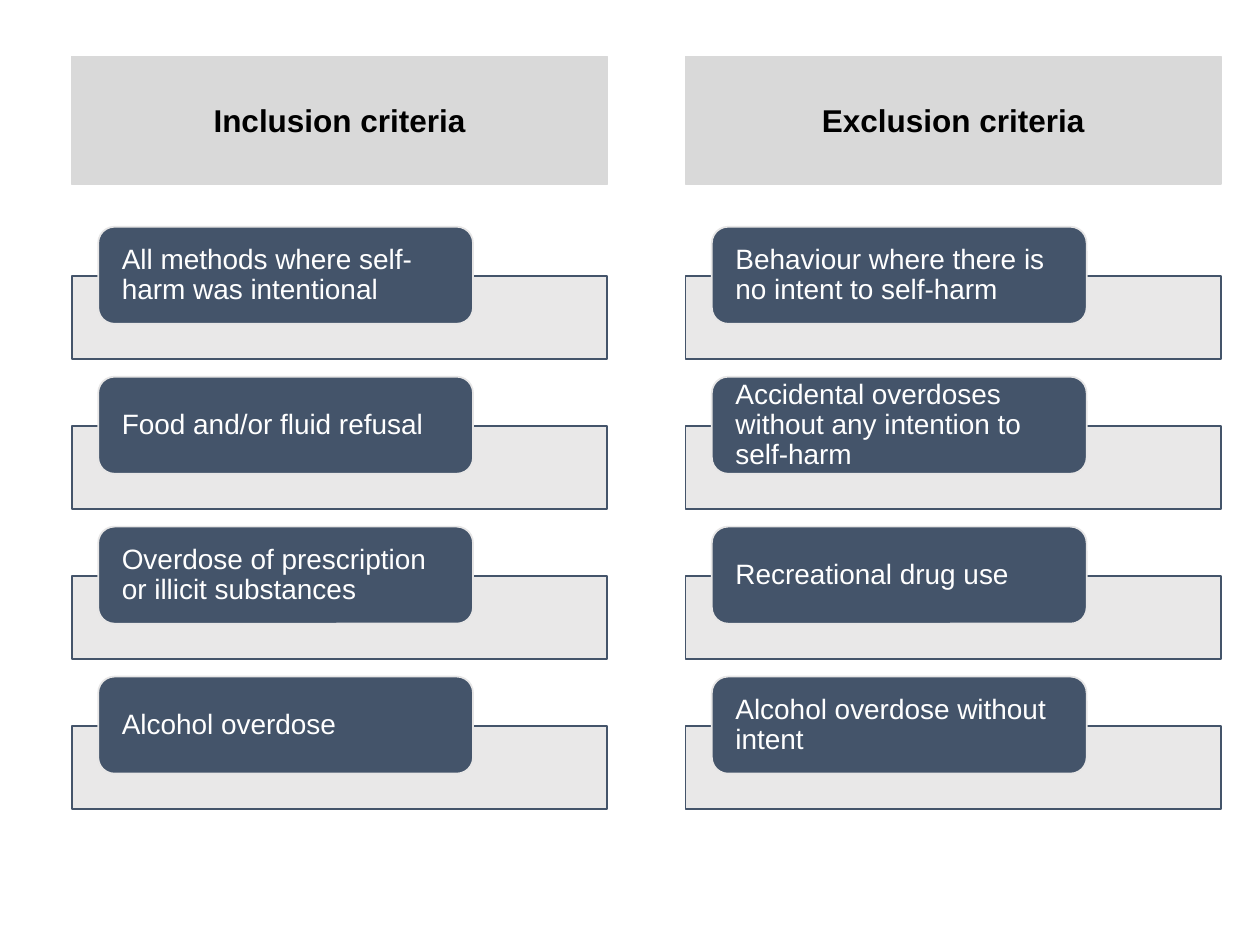
from lxml import etree
from pptx import Presentation
from pptx.dml.color import RGBColor
from pptx.enum.shapes import MSO_SHAPE
from pptx.enum.text import MSO_ANCHOR, PP_ALIGN
from pptx.oxml.ns import qn
from pptx.util import Inches, Pt

RECTANGLE = MSO_SHAPE.RECTANGLE
ROUNDED = MSO_SHAPE.ROUNDED_RECTANGLE
MIDDLE = MSO_ANCHOR.MIDDLE
LEFT, CENTER = PP_ALIGN.LEFT, PP_ALIGN.CENTER

NAVY, PALE, GREY = "44546A", "E7E6E6", "D9D9D9"
COLUMN_TOP, COLUMN_WIDTH = 0.45, 4.25
HEADER_HEIGHT = 1.01
FIRST_ROW, ROW_STEP = 1.35, 1.19

COLUMNS = [
    (0.57, "Inclusion criteria", [
        "All methods where self-harm was intentional",
        "Food and/or fluid refusal",
        "Overdose of prescription or illicit substances",
        "Alcohol overdose",
    ]),
    (5.44, "Exclusion criteria", [
        "Behaviour where there is no intent to self-harm",
        "Accidental overdoses without any intention to self-harm",
        "Recreational drug use",
        "Alcohol overdose without intent",
    ]),
]


def color(value):
    return RGBColor.from_string(value)


def add_box(shapes, kind, left, top, width, height, fill, line, weight=1):
    box = shapes.add_shape(kind, Inches(left), Inches(top), Inches(width), Inches(height))
    box.shadow.inherit = False
    box.fill.solid()
    box.fill.fore_color.rgb = color(fill)
    box.line.color.rgb = color(line)
    box.line.width = Pt(weight)
    return box


def set_opacity(box, percent):
    fill = box.fill._xPr.find(qn("a:solidFill"))
    etree.SubElement(fill[0], qn("a:alpha"), val=str(percent * 1000))


def write_text(box, text, size, text_color, align, bold=False):
    frame = box.text_frame
    frame.text = text
    frame.word_wrap = True
    frame.vertical_anchor = MIDDLE
    para = frame.paragraphs[0]
    para.alignment = align
    font = para.runs[0].font
    font.name = "Arial"
    font.size = Pt(size)
    font.bold = bold
    font.color.rgb = color(text_color)


def add_header(page, left, top, width, height, title):
    header = add_box(page.shapes, RECTANGLE, left, top, width, height, GREY, GREY, 0.75)
    write_text(header, title, 18, "000000", CENTER, bold=True)


def add_criterion(group, left, top, width, text):
    bar = add_box(group.shapes, RECTANGLE, left, top + 0.39, width, 0.66, PALE, NAVY)
    set_opacity(bar, 90)
    label = add_box(group.shapes, ROUNDED, left + 0.21, top, 0.7 * width, 0.77, NAVY, PALE)
    write_text(label, text, 16, "FFFFFF", LEFT)
    frame = label.text_frame
    frame.margin_left, frame.margin_right = Inches(0.15), Inches(0.14)
    frame.margin_top = frame.margin_bottom = 0
    frame.paragraphs[0].line_spacing = 0.9


def add_column(page, left, top, width, title, criteria):
    group = page.shapes.add_group_shape()
    for row, text in enumerate(criteria):
        add_criterion(group, left, top + FIRST_ROW + row * ROW_STEP, width, text)
    add_header(page, left, top, width, HEADER_HEIGHT, title)


def main():
    deck = Presentation()
    deck.slide_width, deck.slide_height = Inches(10), Inches(7.5)
    page = deck.slides.add_slide(deck.slide_layouts[6])
    for left, title, criteria in COLUMNS:
        add_column(page, left, COLUMN_TOP, COLUMN_WIDTH, title, criteria)
    deck.save("out.pptx")


if __name__ == "__main__":
    main()
